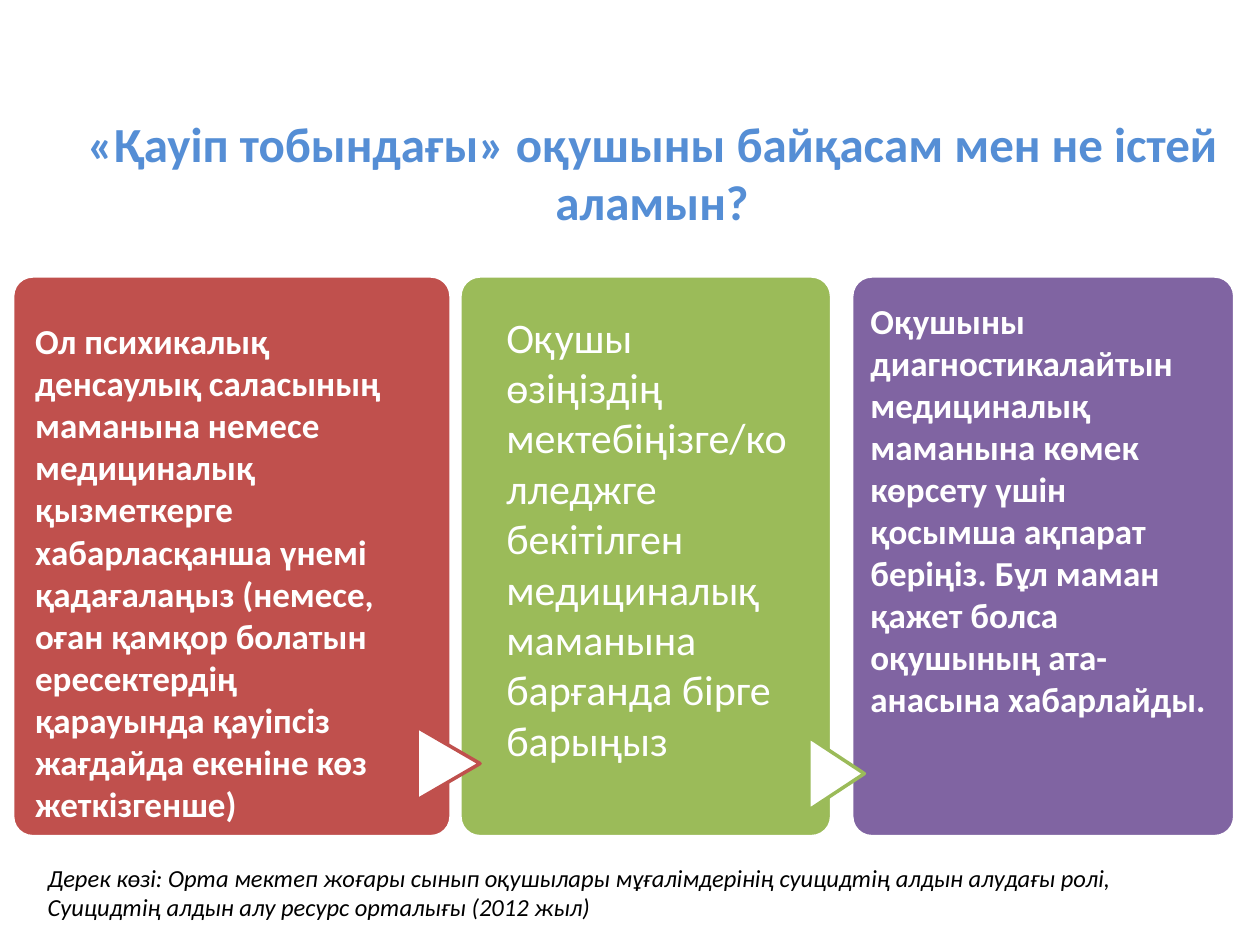
from pptx import Presentation
from pptx.dml.color import RGBColor
from pptx.enum.shapes import MSO_SHAPE as Shape
from pptx.enum.text import MSO_ANCHOR as Anchor, MSO_AUTO_SIZE as AutoSize, PP_ALIGN as Align
from pptx.util import Inches, Pt

WHITE = RGBColor(0xFF, 0xFF, 0xFF)
BLACK = RGBColor(0x00, 0x00, 0x00)
BLUE = RGBColor(0x55, 0x8E, 0xD5)
RED = RGBColor(0xC0, 0x50, 0x4D)
GREEN = RGBColor(0x9B, 0xBB, 0x59)
PURPLE = RGBColor(0x80, 0x64, 0xA2)

FONT = "Calibri"
TITLE = "«Қауіп тобындағы» оқушыны байқасам мен не істей аламын?"
SOURCE = (
    "Дерек көзі: Орта мектеп жоғары сынып оқушылары мұғалімдерінің суицидтің "
    "алдын алудағы ролі, Суицидтің алдын алу ресурс орталығы (2012 жыл)"
)
WATCH = (
    "Ол психикалық денсаулық саласының маманына немесе медициналық қызметкерге "
    "хабарласқанша үнемі қадағалаңыз (немесе, оған қамқор болатын ересектердің "
    "қарауында қауіпсіз жағдайда екеніне көз жеткізгенше)"
)
ACCOMPANY = (
    "Оқушы өзіңіздің мектебіңізге/колледжге бекітілген медициналық маманына "
    "барғанда бірге барыңыз"
)
INFORM = (
    "Оқушыны диагностикалайтын медициналық маманына көмек көрсету үшін қосымша "
    "ақпарат беріңіз. Бұл маман қажет болса оқушының ата-анасына хабарлайды."
)

PANEL_TOP, PANEL_HEIGHT, CORNER = 2.19, 4.45, 0.16


def write(frame, text, size, color, bold=False, italic=False, align=Align.LEFT):
    frame.word_wrap = True
    para = frame.paragraphs[0]
    para.alignment = align
    span = para.add_run()
    span.text = text
    font = span.font
    font.name, font.size, font.color.rgb = FONT, Pt(size), color
    font.bold, font.italic = bold, italic


class PageBuilder:
    def __init__(self, page):
        self.page = page

    def title(self, text, left, top, width, height):
        box = self.page.shapes.title
        box.left, box.top = Inches(left), Inches(top)
        box.width, box.height = Inches(width), Inches(height)
        box.text_frame.vertical_anchor = Anchor.MIDDLE
        write(box.text_frame, text, 28, BLUE, bold=True, align=Align.CENTER)

    def text(self, text, left, top, width, height, **style):
        box = self.page.shapes.add_textbox(
            Inches(left), Inches(top), Inches(width), Inches(height))
        write(box.text_frame, text, **style)
        box.text_frame.auto_size = AutoSize.SHAPE_TO_FIT_TEXT

    def shape(self, kind, left, top, width, height, fill, line):
        shape = self.page.shapes.add_shape(
            kind, Inches(left), Inches(top), Inches(width), Inches(height))
        shape.shadow.inherit = False
        shape.fill.solid()
        shape.fill.fore_color.rgb = fill
        shape.line.color.rgb = line
        shape.line.width = Pt(2)
        return shape

    def panel(self, left, width, color):
        panel = self.shape(Shape.ROUNDED_RECTANGLE, left, PANEL_TOP, width,
                           PANEL_HEIGHT, color, WHITE)
        panel.adjustments[0] = CORNER / width

    def arrow(self, left, top, width, height, color):
        """Triangle pointing right to the next panel."""
        arrow = self.shape(Shape.FLOWCHART_EXTRACT, left, top, width, height, WHITE, color)
        arrow.rotation = 90


def main():
    deck = Presentation()
    deck.slide_width, deck.slide_height = Inches(10), Inches(7.5)
    title_only = deck.slide_layouts[5]
    builder = PageBuilder(deck.slides.add_slide(title_only))

    builder.title(TITLE, 0.35, 0.76, 9.65, 1.21)
    builder.text(SOURCE, 0.28, 6.8, 9.45, 0.57, size=14, color=BLACK, italic=True)

    builder.panel(6.76, 3.04, PURPLE)
    builder.panel(3.65, 2.95, GREEN)
    builder.arrow(6.35, 5.92, 0.58, 0.44, GREEN)
    builder.panel(0.1, 3.48, RED)
    builder.arrow(3.27, 5.81, 0.58, 0.5, RED)

    builder.text(WATCH, 0.18, 2.49, 3.19, 4.14, size=20, color=WHITE, bold=True)
    builder.text(ACCOMPANY, 3.92, 2.42, 2.49, 3.74, size=24, color=WHITE)
    builder.text(INFORM, 6.81, 2.33, 2.97, 3.47, size=20, color=WHITE, bold=True)

    deck.save("out.pptx")


if __name__ == "__main__":
    main()
